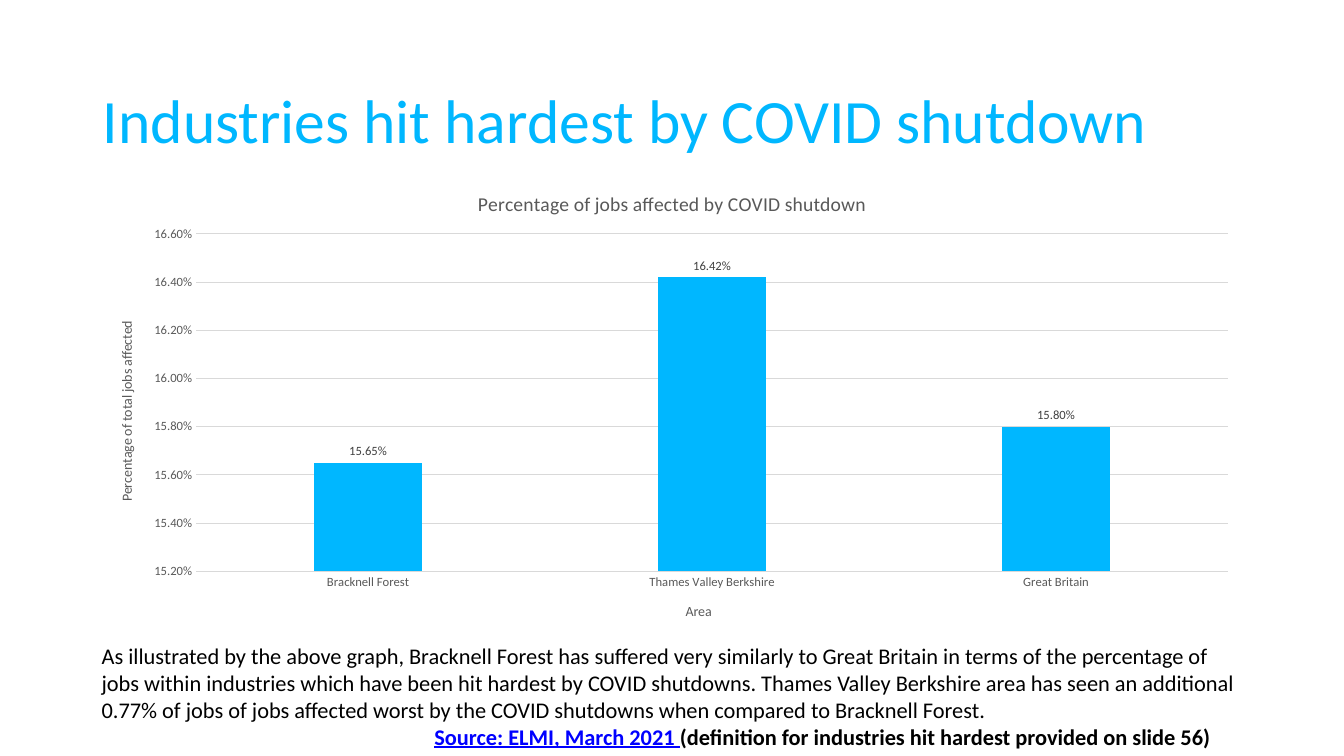
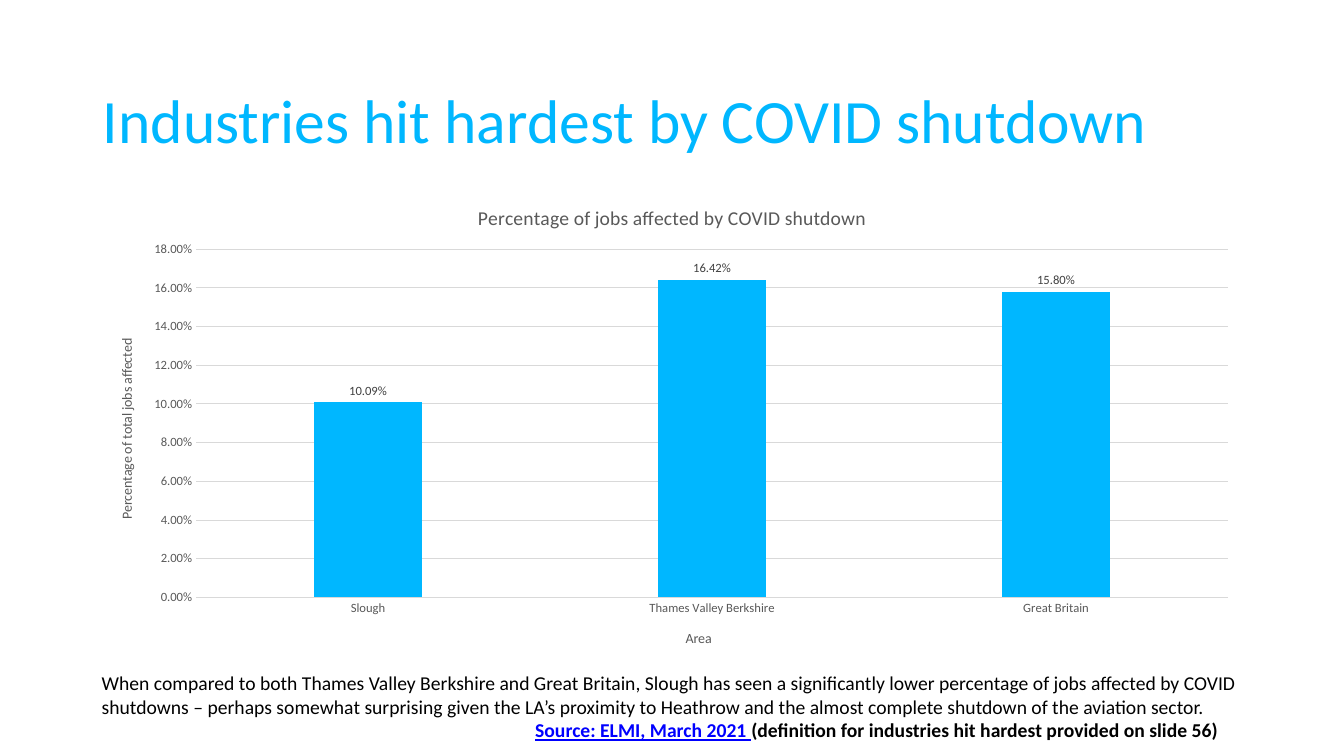
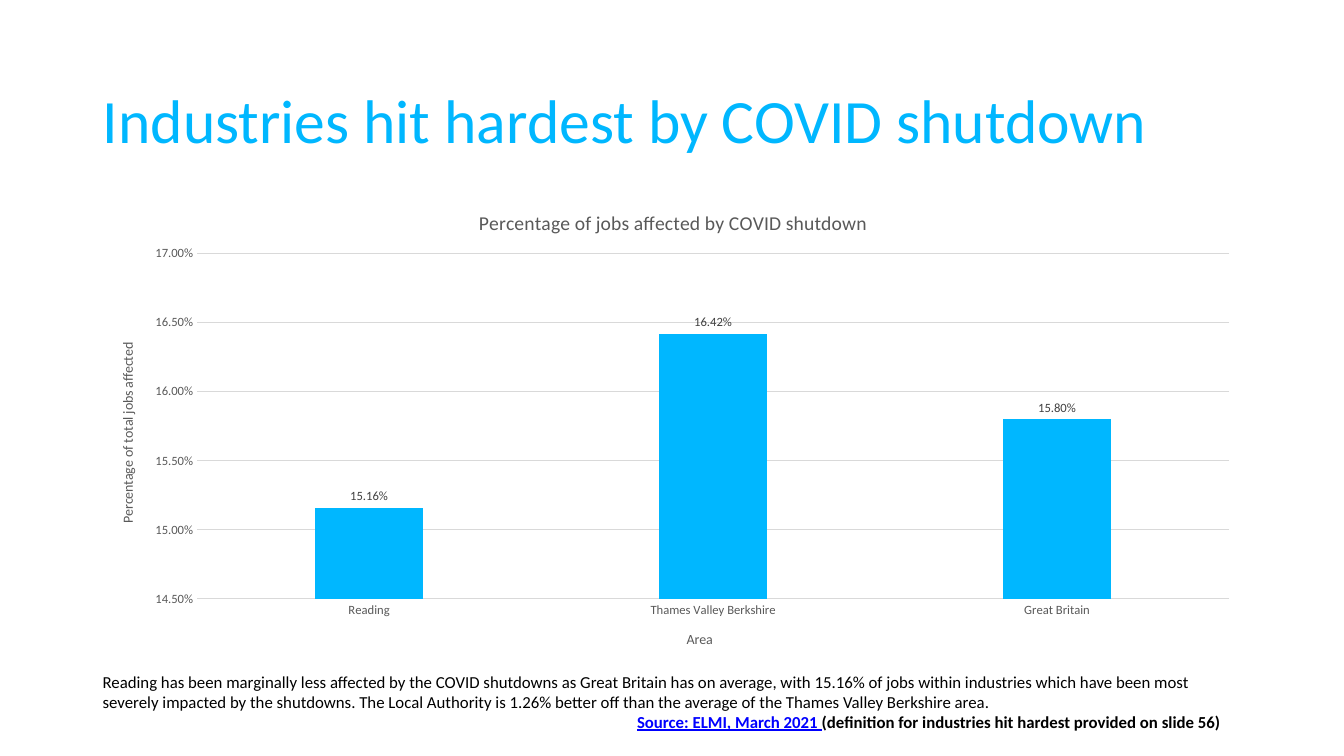
from dataclasses import dataclass

from pptx import Presentation
from pptx.chart.data import CategoryChartData
from pptx.dml.color import RGBColor as Rgb
from pptx.enum.chart import XL_CHART_TYPE as ChartType
from pptx.enum.chart import XL_LABEL_POSITION as LabelPosition
from pptx.enum.chart import XL_TICK_MARK as TickMark
from pptx.enum.text import MSO_ANCHOR as Anchor
from pptx.enum.text import MSO_AUTO_SIZE as AutoSize
from pptx.enum.text import PP_ALIGN as Align
from pptx.oxml import parse_xml
from pptx.oxml.ns import nsdecls, qn
from pptx.util import Inches, Pt


@dataclass(frozen=True)
class Theme:
    """Colours, font and type sizes shared by the slides."""

    font: str = "Calibri"
    accent: Rgb = Rgb(0x00, 0xB7, 0xFF)
    ink: Rgb = Rgb(0x00, 0x00, 0x00)
    link: Rgb = Rgb(0x00, 0x00, 0xFF)
    chart_text: Rgb = Rgb(0x59, 0x59, 0x59)
    label_text: Rgb = Rgb(0x40, 0x40, 0x40)
    grid: Rgb = Rgb(0xD9, 0xD9, 0xD9)
    title_size: int = 44
    chart_title_size: int = 14
    axis_title_size: int = 10
    tick_size: int = 9
    grid_width: float = 0.75


@dataclass(frozen=True)
class AreaSlide:
    """Content and box sizes of one local area's slide."""

    area: str
    share: float
    scale: tuple
    chart_box: tuple
    note_box: tuple
    note: str
    note_size: int
    source_indent: float


THEME = Theme()
TITLE = "Industries hit hardest by COVID shutdown"
TITLE_BOX = (0.92, 0.61, 11.5, 1.24)
CHART_TITLE = "Percentage of jobs affected by COVID shutdown"
VALUE_TITLE = "Percentage of total jobs affected"
SOURCE = "Source: ELMI, March 2021 "
DEFINITION = "(definition for industries hit hardest provided on slide 56)"
BENCHMARKS = {"Thames Valley Berkshire": 0.1642, "Great Britain": 0.158}
PERCENT = "0.00%"

AREA_SLIDES = (
    AreaSlide(
        "Bracknell Forest", 0.1565, (0.152, 0.166, 0.002),
        (0.91, 1.67, 11.5, 4.65), (0.91, 6.32, 11.5, 1.18),
        "As illustrated by the above graph, Bracknell Forest has suffered very "
        "similarly to Great Britain in terms of the percentage of jobs within "
        "industries which have been hit hardest by COVID shutdowns. Thames Valley "
        "Berkshire area has seen an additional 0.77% of jobs of jobs affected worst "
        "by the COVID shutdowns when compared to Bracknell Forest.",
        16, 3.3),
    AreaSlide(
        "Slough", 0.1009, (0, 0.18, 0.02),
        (0.91, 1.8, 11.5, 4.8), (0.91, 6.61, 11.5, 0.81),
        "When compared to both Thames Valley Berkshire and Great Britain, Slough has "
        "seen a significantly lower percentage of jobs affected by COVID shutdowns – "
        "perhaps somewhat surprising given the LA’s proximity to Heathrow and the "
        "almost complete shutdown of the aviation sector.",
        14, 4.3),
    AreaSlide(
        "Reading", 0.1516, (0.145, 0.17, 0.005),
        (0.92, 1.85, 11.5, 4.76), (0.92, 6.61, 11.5, 0.71),
        "Reading has been marginally less affected by the COVID shutdowns as Great "
        "Britain has on average, with 15.16% of jobs within industries which have "
        "been most severely impacted by the shutdowns. The Local Authority is 1.26% "
        "better off than the average of the Thames Valley Berkshire area.",
        12, 5.3),
)


def inches(box):
    """Turn a box in inches into lengths."""
    return [Inches(length) for length in box]


def style_font(font, size, color, bold=False):
    """Apply the theme font with a size, colour and weight."""
    font.name = THEME.font
    font.size = Pt(size)
    font.color.rgb = color
    font.bold = bold


def add_run(paragraph, text, size, color, bold=False):
    """Add a styled run and return it."""
    run = paragraph.add_run()
    run.text = text
    style_font(run.font, size, color, bold)
    return run


def set_layout(element, **fractions):
    """Place a chart part at fractions of the chart's size."""
    for old_layout in element.findall(qn("c:layout")):
        element.remove(old_layout)
    target = '<c:layoutTarget val="inner"/>' if "w" in fractions else ""
    modes = "".join(f'<c:{key}Mode val="edge"/>' for key in "xy")
    values = "".join(f'<c:{key} val="{value}"/>' for key, value in fractions.items())
    layout = parse_xml(
        f'<c:layout {nsdecls("c")}><c:manualLayout>{target}{modes}{values}'
        "</c:manualLayout></c:layout>")
    text = element.find(qn("c:tx"))
    if text is None:
        element.insert(0, layout)
    else:
        text.addnext(layout)


def set_chart_text(title, text, size, x, y):
    """Write and place a chart or axis title."""
    add_run(title.text_frame.paragraphs[0], text, size, THEME.chart_text)
    set_layout(title._element, x=x, y=y)


def style_axis(axis, text, x, y):
    """Format an axis's labels, tick marks and title."""
    axis.major_tick_mark = axis.minor_tick_mark = TickMark.NONE
    style_font(axis.tick_labels.font, THEME.tick_size, THEME.chart_text)
    set_chart_text(axis.axis_title, text, THEME.axis_title_size, x, y)


def style_line(line):
    """Give a chart line the grid colour and width."""
    line.color.rgb = THEME.grid
    line.width = Pt(THEME.grid_width)


def add_title(slide, box):
    """Place and fill the slide title."""
    title = slide.shapes.title
    title.left, title.top, title.width, title.height = inches(box)
    frame = title.text_frame
    frame.word_wrap = True
    frame.auto_size = AutoSize.NONE
    frame.vertical_anchor = Anchor.MIDDLE
    paragraph = frame.paragraphs[0]
    paragraph.alignment = Align.LEFT
    paragraph.line_spacing = 0.9
    add_run(paragraph, TITLE, THEME.title_size, THEME.accent)


def add_note(slide, content):
    """Add the commentary and its indented source line."""
    frame = slide.shapes.add_textbox(*inches(content.note_box)).text_frame
    frame.word_wrap = True
    frame.auto_size = AutoSize.SHAPE_TO_FIT_TEXT
    size = content.note_size
    add_run(frame.paragraphs[0], content.note, size, THEME.ink)
    source = frame.add_paragraph()
    properties = source._p.get_or_add_pPr()
    properties.set("marL", str(Inches(content.source_indent)))
    properties.set("indent", "0")
    add_run(source, SOURCE, size, THEME.link, bold=True).font.underline = True
    add_run(source, DEFINITION, size, THEME.ink, bold=True)


def add_share_chart(slide, content):
    """Add the column chart comparing the area with its benchmarks."""
    shares = {content.area: content.share, **BENCHMARKS}
    data = CategoryChartData(number_format=PERCENT)
    data.categories = list(shares)
    data.add_series("Series 1", list(shares.values()))
    chart = slide.shapes.add_chart(
        ChartType.COLUMN_CLUSTERED, *inches(content.chart_box), data).chart
    style_font(chart.font, THEME.axis_title_size, THEME.ink)
    chart.has_legend = False
    set_chart_text(chart.chart_title, CHART_TITLE, THEME.chart_title_size, 0.33, 0.04)
    chart.chart_title.include_in_layout = False

    category_axis, value_axis = chart.category_axis, chart.value_axis
    style_axis(category_axis, "Area", 0.51, 0.92)
    style_line(category_axis.format.line)
    style_axis(value_axis, VALUE_TITLE, 0.02, 0.32)
    body = value_axis.axis_title._element.find(".//" + qn("a:bodyPr"))
    body.set("rot", "-5400000")
    body.set("vert", "horz")
    value_axis.format.line.fill.background()
    style_line(value_axis.major_gridlines.format.line)
    value_axis.tick_labels.number_format = PERCENT
    value_axis.tick_labels.number_format_is_linked = False
    (value_axis.minimum_scale, value_axis.maximum_scale,
     value_axis.major_unit) = content.scale

    plot = chart.plots[0]
    plot.gap_width, plot.overlap = 219, -27
    plot.vary_by_categories = False
    series = plot.series[0]
    series.format.fill.solid()
    series.format.fill.fore_color.rgb = THEME.accent
    labels = series.data_labels
    labels.show_value = True
    labels.position = LabelPosition.OUTSIDE_END
    labels.number_format = PERCENT
    labels.number_format_is_linked = False
    style_font(labels.font, THEME.tick_size, THEME.label_text)
    plot_area = chart._chartSpace.find(".//" + qn("c:plotArea"))
    set_layout(plot_area, x=0.09, y=0.14, w=0.89, h=0.72)


def add_area_slide(presentation, content):
    """Add one area's slide with title, commentary and chart."""
    slide = presentation.slides.add_slide(presentation.slide_layouts[5])
    add_title(slide, TITLE_BOX)
    add_note(slide, content)
    add_share_chart(slide, content)


def main():
    """Build and save the presentation."""
    presentation = Presentation()
    presentation.slide_width = Inches(13.33)
    presentation.slide_height = Inches(7.5)
    for content in AREA_SLIDES:
        add_area_slide(presentation, content)
    presentation.save("out.pptx")


if __name__ == "__main__":
    main()
